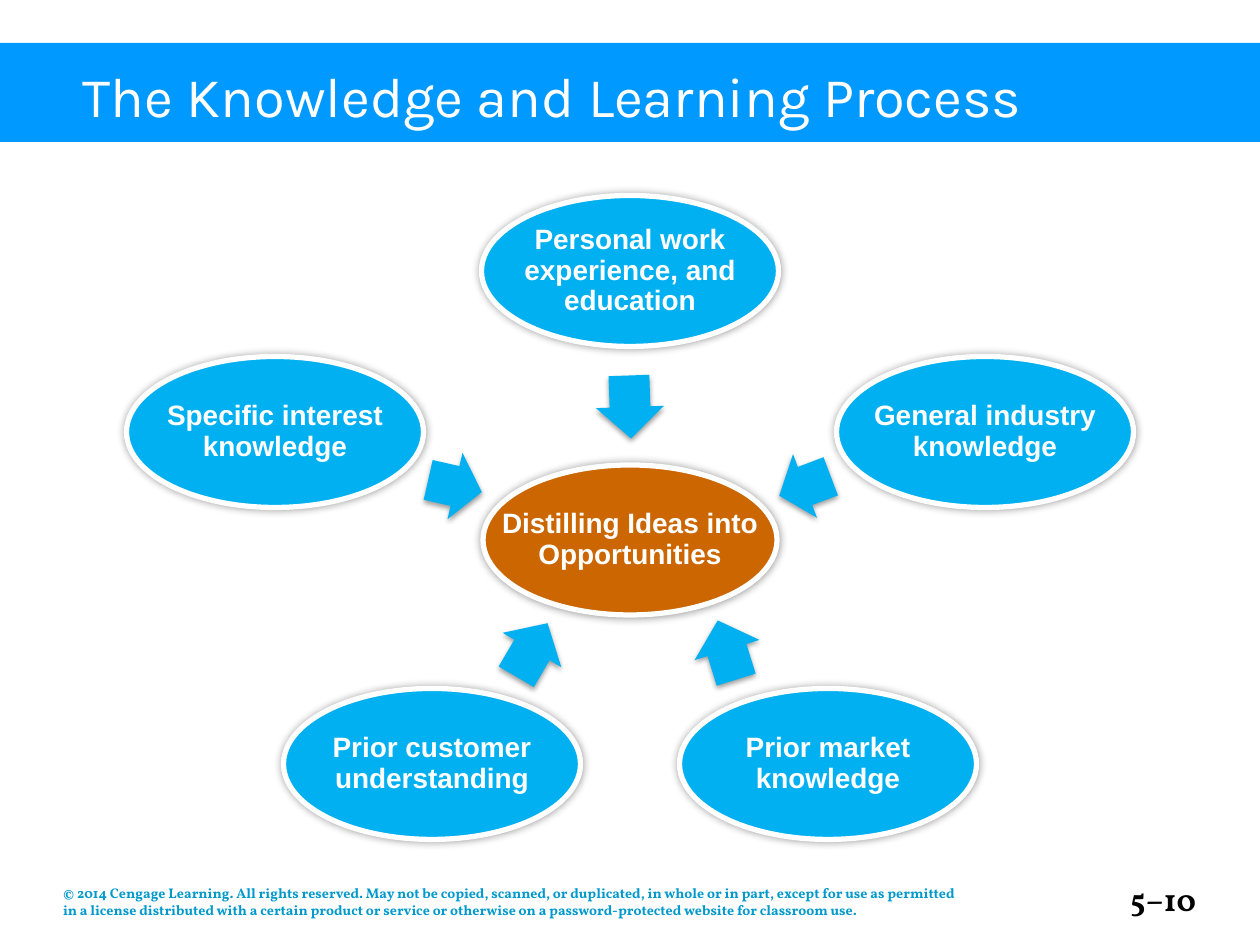
from dataclasses import dataclass

from lxml import etree
from pptx import Presentation
from pptx import util as u
from pptx.dml.color import RGBColor
from pptx.enum import shapes, text
from pptx.oxml.ns import qn

SCALE = u.Inches(1) / 126  # EMU per px


@dataclass(frozen=True)
class Theme:
    banner: str = "0099FF"
    source: str = "00B0F0"
    hub: str = "CC6600"
    white: str = "FFFFFF"
    black: str = "000000"
    legal: str = "0099CC"
    heading_font: str = "Karla"
    body_font: str = "Arial"
    footer_font: str = "Vollkorn"
    heading_size: int = 32
    body_size: int = 16
    number_size: int = 18
    legal_size: int = 8
    outline: int = 3


THEME = Theme()
HUB = (630, 540, 294, 150)
OVAL_SIZE = (297, 151)
ARROW_HEIGHT = 68

# Each source: label, oval centre, arrow centre, arrow length, arrow angle
SOURCES = [
    ("Personal work experience, and education", (630, 271), (630, 407), 63, 88),
    ("General industry knowledge", (985, 432), (805, 486), 55, 159.3),
    ("Prior market knowledge", (828, 764), (727, 650), 62, 252.7),
    ("Prior customer understanding", (432, 764), (532, 650), 62, 300.3),
    ("Specific interest knowledge", (275, 432), (455, 486), 55, 12.7),
]


def px(*lengths):
    return [u.Emu(round(length * SCALE)) for length in lengths]


def centred(x, y, width, height):
    return px(x - width / 2, y - height / 2, width, height)


def write(box, words, font, size, color, bold=True, margins=(0, 6, 0, 6),
          anchor=text.MSO_ANCHOR.BOTTOM, align=text.PP_ALIGN.LEFT, spacing=None):
    frame = box.text_frame
    frame.word_wrap = True
    frame.vertical_anchor = anchor
    (frame.margin_left, frame.margin_top,
     frame.margin_right, frame.margin_bottom) = px(*margins)
    para = frame.paragraphs[0]
    para.text = words
    para.alignment = align
    if spacing:
        para.line_spacing = spacing
    para.font.name = font
    para.font.size = u.Pt(size)
    para.font.bold = bold
    para.font.color.rgb = RGBColor.from_string(color)


def add_filled(page, kind, bounds, color):
    shape = page.shapes.add_shape(kind, *bounds)
    shape.shadow.inherit = False
    shape.fill.solid()
    shape.fill.fore_color.rgb = RGBColor.from_string(color)
    shape.line.fill.background()
    return shape


def add_shadow(shape, opacity, blur, distance=0, angle=0):
    effects = shape._element.spPr.find(qn("a:effectLst"))
    shadow = etree.SubElement(
        effects, qn("a:outerShdw"), blurRad=str(u.Pt(blur)),
        dist=str(u.Pt(distance)), dir=str(angle * 60000), rotWithShape="0")
    color = etree.SubElement(shadow, qn("a:srgbClr"), val=THEME.black)
    etree.SubElement(color, qn("a:alpha"), val=str(opacity * 1000))


def add_oval(page, label, bounds, color):
    oval = add_filled(page, shapes.MSO_SHAPE.OVAL, bounds, color)
    oval.line.color.rgb = RGBColor.from_string(THEME.white)
    oval.line.width = u.Pt(THEME.outline)
    add_shadow(oval, 40, 5)
    # The label uses the full width of the oval, beyond its own text area
    write(page.shapes.add_textbox(*bounds), label, THEME.body_font,
          THEME.body_size, THEME.white, margins=(2, 2, 2, 2),
          anchor=text.MSO_ANCHOR.MIDDLE, align=text.PP_ALIGN.CENTER, spacing=0.9)


def add_arrow(page, centre, length, angle):
    arrow = add_filled(page, shapes.MSO_SHAPE.RIGHT_ARROW,
                       centred(*centre, length, ARROW_HEIGHT), THEME.source)
    arrow.adjustments[0] = 0.6
    arrow.adjustments[1] = 0.5
    arrow.rotation = angle
    add_shadow(arrow, 38, 3.1, 1.6, 90)


def add_banner(page):
    banner = add_filled(page, shapes.MSO_SHAPE.RECTANGLE,
                        px(0, 43, 1260, 99), THEME.banner)
    write(banner, "The Knowledge and Learning Process", THEME.heading_font,
          THEME.heading_size, THEME.white, bold=False,
          margins=(83, 19, 13, 13), anchor=text.MSO_ANCHOR.MIDDLE)


def add_footer(page):
    legal = page.shapes.add_textbox(*px(63, 882, 903, 42))
    write(legal, "© 2014 Cengage Learning. All rights reserved. May not be copied, "
          "scanned, or duplicated, in whole or in part, except for use as permitted "
          "in a license distributed with a certain product or service or otherwise "
          "on a password-protected website for classroom use.",
          THEME.footer_font, THEME.legal_size, THEME.legal)
    number = page.shapes.add_textbox(*px(1017, 892, 179, 32))
    write(number, "5–10", THEME.footer_font, THEME.number_size, THEME.black,
          align=text.PP_ALIGN.RIGHT)


def main():
    deck = Presentation()
    deck.slide_width, deck.slide_height = px(1260, 945)
    page = deck.slides.add_slide(deck.slide_layouts[6])

    add_banner(page)
    add_footer(page)

    # Hub with its five sources
    add_oval(page, "Distilling Ideas into Opportunities", centred(*HUB), THEME.hub)
    for label, oval_centre, arrow_centre, length, angle in SOURCES:
        add_arrow(page, arrow_centre, length, angle)
        add_oval(page, label, centred(*oval_centre, *OVAL_SIZE), THEME.source)

    deck.save("out.pptx")


if __name__ == "__main__":
    main()
